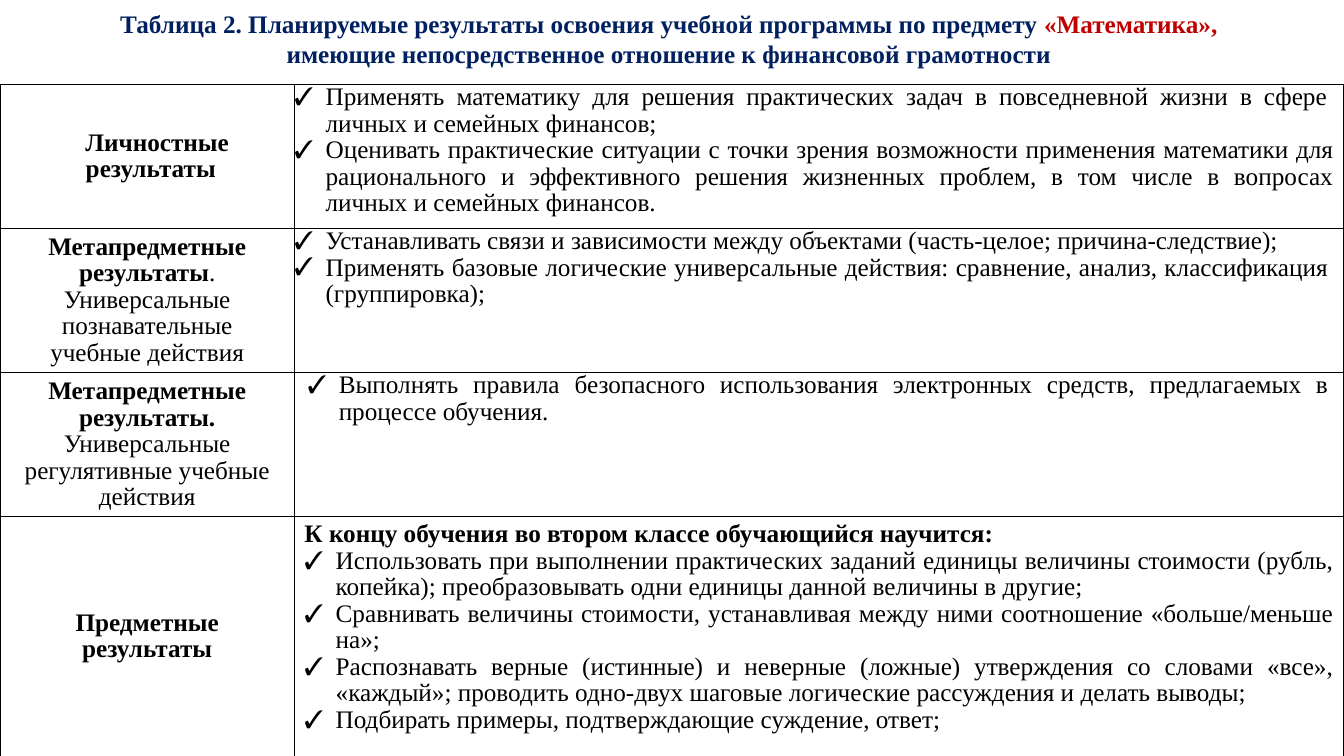
from lxml.etree import SubElement
from pptx import Presentation
from pptx.dml.color import RGBColor
from pptx.enum.text import MSO_ANCHOR, PP_ALIGN
from pptx.oxml.ns import qn
from pptx.util import Inches, Pt

COLORS = {"title": "002060", "accent": "C00000", "text": "000000", "line": "000000"}
FONT = "Times New Roman"
W, H = 13.33, 7.5
HANG = 0.31
COLS = [2.92, 10.41]
ROWS = [1.42, 1.43, 1.43, 2.38]

TITLE = [
    [("Таблица 2. Планируемые результаты освоения учебной программы по предмету ", "title"),
     ("«Математика», ", "accent")],
    [("имеющие непосредственное отношение к финансовой грамотности ", "title")],
]

# Label lines: runs of (text, bold), left indent, right indent
LABELS = [
    [([("\u00a0\u00a0", False), ("Личностные результаты", True)], 0.07, 0)],
    [([("Метапредметные результаты", True), (".", False)], 0.45, 0.45),
     ([("Универсальные познавательные учебные действия", False)], 0.22, 0.22)],
    [([("Метапредметные результаты.", True)], 0.45, 0.45),
     ([("Универсальные регулятивные учебные действия", False)], 0.16, 0.16)],
    [([("Предметные результаты", True)], 0.16, 0.16)],
]

# Result items: text, left indent, right indent
RESULTS = [
    [("Применять математику для решения практических задач в повседневной жизни в сфере личных и семейных финансов;", HANG, 0.16),
     ("Оценивать практические ситуации с точки зрения возможности применения математики для рационального и эффективного решения жизненных проблем, в том числе в вопросах личных и семейных финансов.", HANG, 0.1)],
    [("Устанавливать связи и зависимости между объектами (часть-целое; причина-следствие);", HANG, 0.15),
     ("Применять базовые логические универсальные действия: сравнение, анализ, классификация (группировка);", HANG, 0.15)],
    [("Выполнять правила безопасного использования электронных средств, предлагаемых в процессе обучения.", 0.44, 0.15)],
    [("К концу обучения во втором классе обучающийся научится:", 0, 0),
     ("Использовать при выполнении практических заданий единицы величины стоимости (рубль, копейка); преобразовывать одни единицы данной величины в другие;", HANG, 0),
     ("Сравнивать величины стоимости, устанавливая между ними соотношение «больше/меньше на»;", HANG, 0),
     ("Распознавать верные (истинные) и неверные (ложные) утверждения со словами «все», «каждый»; проводить одно-двух шаговые логические рассуждения и делать выводы;", HANG, 0),
     ("Подбирать примеры, подтверждающие суждение, ответ;", HANG, 0)],
]


def add_run(p, text, color, bold):
    """Append a run in the slide's font."""
    r = p.add_run()
    r.text = text
    r.font.name, r.font.size, r.font.bold = FONT, Pt(18), bold
    r.font.color.rgb = RGBColor.from_string(COLORS[color])


def paragraphs(tf, items):
    """Yield a paragraph of the frame together with each item."""
    for i, item in enumerate(items):
        yield (tf.add_paragraph() if i else tf.paragraphs[0]), item


def format_line(p, align, left, right, bullet=False):
    """Set alignment, spacing, indents and an optional check mark."""
    p.alignment, p.line_spacing = align, 0.95
    pPr = p._p.get_or_add_pPr()
    pPr.set("marL", str(Inches(left)))
    pPr.set("marR", str(Inches(right)))
    pPr.set("indent", str(Inches(-HANG if bullet else 0)))
    if bullet:
        SubElement(pPr, qn("a:buFont"), typeface=FONT)
        SubElement(pPr, qn("a:buChar"), char="✓")


def frame_cell(cell):
    """Clear the cell's fill and draw thin lines on its four sides."""
    tcPr = cell._tc.get_or_add_tcPr()
    for side in ("a:lnL", "a:lnR", "a:lnT", "a:lnB"):
        ln = SubElement(tcPr, qn(side), w=str(Pt(1)))
        fill = SubElement(ln, qn("a:solidFill"))
        SubElement(fill, qn("a:srgbClr"), val=COLORS["line"])
    cell.fill.background()


def set_margins(cell, side, top):
    """Set equal side margins and equal top and bottom margins."""
    cell.margin_left = cell.margin_right = Inches(side)
    cell.margin_top = cell.margin_bottom = Inches(top)


def add_title(s, x, y, w, h):
    """Place the two-line heading in its box."""
    tf = s.shapes.add_textbox(Inches(x), Inches(y), Inches(w), Inches(h)).text_frame
    tf.word_wrap = True
    for p, runs in paragraphs(tf, TITLE):
        p.alignment = PP_ALIGN.CENTER
        for text, color in runs:
            add_run(p, text, color, True)


def fill_label(cell, lines):
    """Write a centred row label."""
    set_margins(cell, 0, 0)
    cell.vertical_anchor = MSO_ANCHOR.MIDDLE
    for p, (runs, left, right) in paragraphs(cell.text_frame, lines):
        format_line(p, PP_ALIGN.CENTER, left, right)
        for text, bold in runs:
            add_run(p, text, "text", bold)


def fill_results(cell, items):
    """Write justified items; an item without indent is a bold lead-in."""
    has_lead = items[0][1] == 0
    set_margins(cell, 0.1 if has_lead else 0, 0.05 if has_lead else 0)
    for p, (text, left, right) in paragraphs(cell.text_frame, items):
        format_line(p, PP_ALIGN.JUSTIFY, left, right, bullet=left > 0)
        add_run(p, text, "text", left == 0)


def add_results_table(s, x, y, w, h):
    """Place the table of planned results in its box."""
    table = s.shapes.add_table(len(ROWS), len(COLS), Inches(x), Inches(y), Inches(w), Inches(h)).table
    table.first_row = table.horz_banding = False
    for col, width in zip(table.columns, COLS):
        col.width = Inches(width)
    for i, height in enumerate(ROWS):
        table.rows[i].height = Inches(height)
        fill_label(table.cell(i, 0), LABELS[i])
        fill_results(table.cell(i, 1), RESULTS[i])
        for j in range(len(COLS)):
            frame_cell(table.cell(i, j))


def main():
    """Build and save the slide."""
    prs = Presentation()
    prs.slide_width, prs.slide_height = Inches(W), Inches(H)
    s = prs.slides.add_slide(prs.slide_layouts[6])
    add_title(s, 0.08, 0.03, W - 0.16, 0.71)
    add_results_table(s, 0, H - sum(ROWS), W, sum(ROWS))
    prs.save("out.pptx")


if __name__ == "__main__":
    main()
